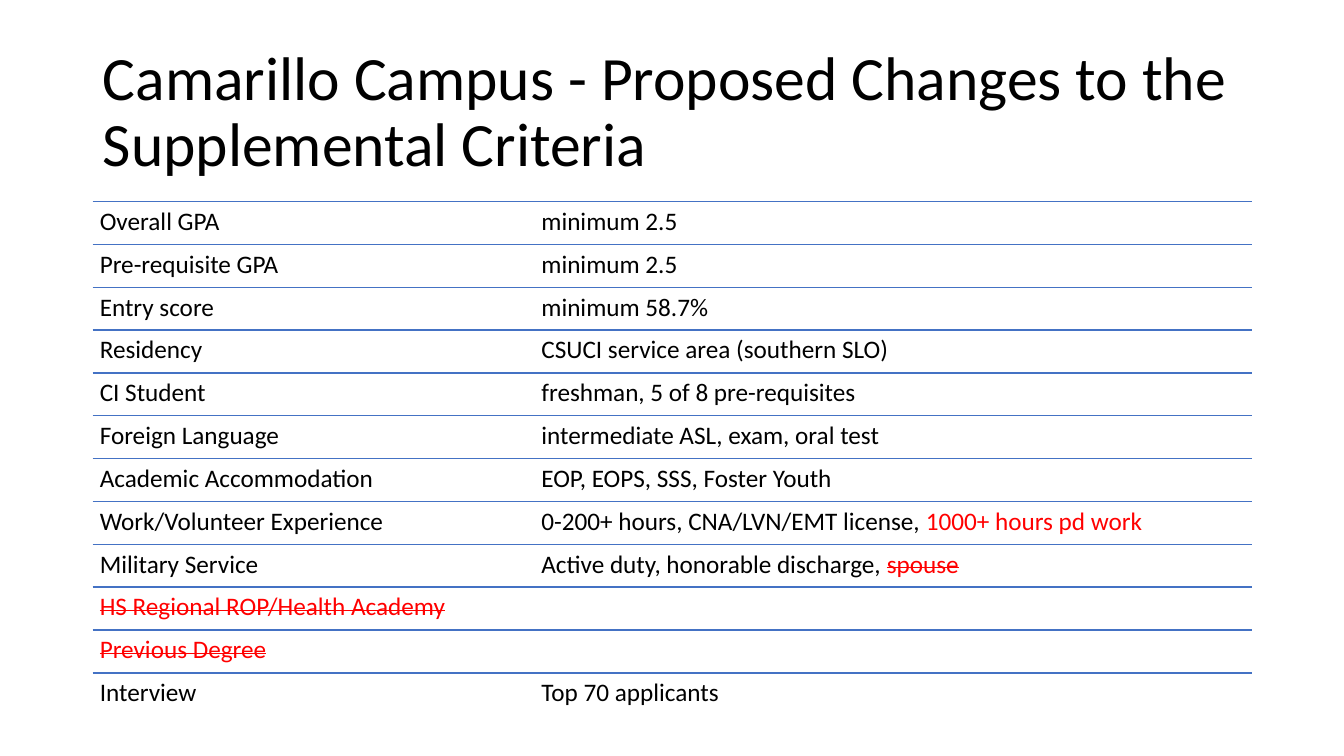
from typing import NamedTuple

from lxml import etree
from pptx import Presentation
from pptx.dml.color import RGBColor
from pptx.enum import shapes, text
from pptx.oxml import ns
from pptx.util import Inches, Pt

COLORS = {"ink": "000000", "rule": "4472C4", "change": "FF0000"}
FONT = "Calibri"
LEFT, TOP, WIDTH = 0.92, 2, 11.5
INSET = 0.07
TAB = 4.38  # start of the second column, from the text edge


class Part(NamedTuple):
    words: str
    color: str = "ink"
    strike: bool = False


class Row(NamedTuple):
    name: Part
    rule: Part | None = None
    change: Part | None = None


def cut(words: str) -> Part:
    return Part(words, "change", True)


ROWS = [
    Row(Part("Overall GPA"), Part("minimum 2.5")),
    Row(Part("Pre-requisite GPA"), Part("minimum 2.5")),
    Row(Part("Entry score"), Part("minimum 58.7%")),
    Row(Part("Residency"), Part("CSUCI service area (southern SLO)")),
    Row(Part("CI Student"), Part("freshman, 5 of 8 pre-requisites")),
    Row(Part("Foreign Language"), Part("intermediate ASL, exam, oral test")),
    Row(Part("Academic Accommodation"), Part("EOP, EOPS, SSS, Foster Youth")),
    Row(Part("Work/Volunteer Experience"),
        Part("0-200+ hours, CNA/LVN/EMT license, "),
        Part("1000+ hours pd work", "change")),
    Row(Part("Military Service"),
        Part("Active duty, honorable discharge, "), cut("spouse")),
    Row(cut("HS Regional ROP/Health Academy")),
    Row(cut("Previous Degree")),
    Row(Part("Interview"), Part("Top 70 applicants")),
]
PITCH = 5.1 / len(ROWS)


def add_text(para, words: str, *, size: float = 18, color: str = "ink",
             strike: bool = False) -> None:
    run = para.add_run()
    run.text = words
    run.font.name = FONT
    run.font.size = Pt(size)
    run.font.color.rgb = RGBColor.from_string(COLORS[color])
    if strike:
        run.font._element.set("strike", "sngStrike")


def add_tab(para, place: float) -> None:
    """Set one left tab stop, in inches from the text edge."""
    props = para._p.get_or_add_pPr()
    tabs = etree.SubElement(props, ns.qn("a:tabLst"))
    etree.SubElement(tabs, ns.qn("a:tab"), pos=str(Inches(place)), algn="l")


def add_rule(slide, top: float) -> None:
    line = slide.shapes.add_connector(
        shapes.MSO_CONNECTOR.STRAIGHT, Inches(LEFT), Inches(top),
        Inches(LEFT + WIDTH), Inches(top))
    line.line.color.rgb = RGBColor.from_string(COLORS["rule"])
    line.line.width = Pt(1)
    etree.SubElement(line._element.spPr, ns.qn("a:effectLst"))


def add_row(slide, row: Row, top: float) -> None:
    add_rule(slide, top)
    box = slide.shapes.add_textbox(
        Inches(LEFT), Inches(top), Inches(WIDTH), Inches(PITCH))
    frame = box.text_frame
    frame.word_wrap = True
    frame.margin_left = frame.margin_right = Inches(INSET)
    frame.margin_top = frame.margin_bottom = Inches(INSET)
    para = frame.paragraphs[0]
    para.line_spacing = 0.9
    add_text(para, row.name.words, color=row.name.color,
             strike=row.name.strike)
    if row.rule:
        add_tab(para, TAB)
        add_text(para, "\t" + row.rule.words, color=row.rule.color)
    if row.change:
        add_text(para, row.change.words, color=row.change.color,
                 strike=row.change.strike)


def add_title(slide, words: str) -> None:
    title = slide.shapes.title
    title.left, title.top = Inches(LEFT), Inches(0.4)
    title.width, title.height = Inches(WIDTH), Inches(1.45)
    frame = title.text_frame
    frame.word_wrap = True
    frame.auto_size = text.MSO_AUTO_SIZE.NONE
    frame.vertical_anchor = text.MSO_ANCHOR.MIDDLE
    para = frame.paragraphs[0]
    para.alignment = text.PP_ALIGN.LEFT
    para.line_spacing = 0.9
    add_text(para, words, size=44)


def main() -> None:
    deck = Presentation()
    deck.slide_width, deck.slide_height = Inches(13.33), Inches(7.5)
    slide = deck.slides.add_slide(deck.slide_layouts.get_by_name("Title Only"))
    add_title(slide, "Camarillo Campus - Proposed Changes to the "
                     "Supplemental Criteria")
    for i, row in enumerate(ROWS):
        add_row(slide, row, TOP + i * PITCH)
    deck.save("out.pptx")


if __name__ == "__main__":
    main()
